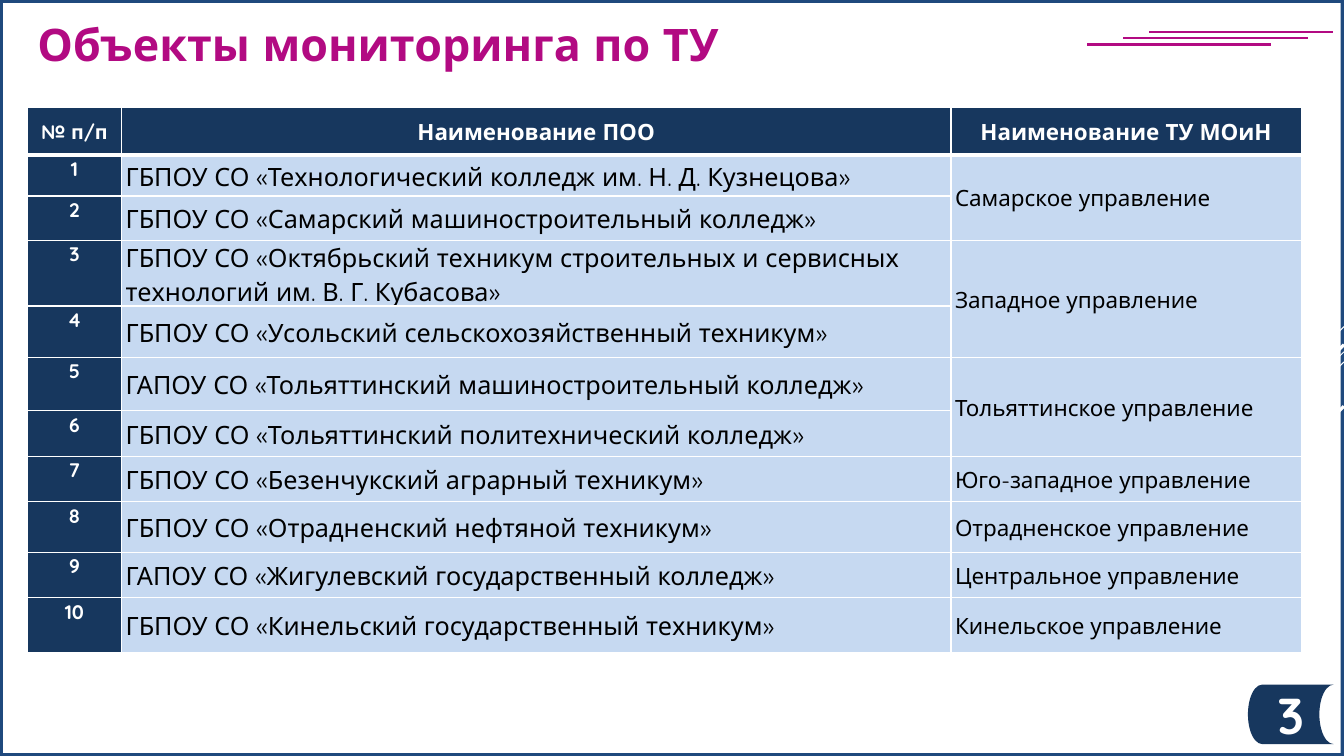
import pptx
import pptx.util
import pptx.dml.color
import pptx.enum.shapes
import pptx.enum.text
import pptx.oxml
import pptx.oxml.ns
import lxml.etree

Pt = pptx.util.Pt
PP_ALIGN = pptx.enum.text.PP_ALIGN
ANCHOR = pptx.enum.text.MSO_ANCHOR
SHAPE = pptx.enum.shapes.MSO_SHAPE
NAVY, MAGENTA, WHITE, PALE = "17375E", "B20A82", "FFFFFF", "C6D9F1"


def colour(hex_value):
    return pptx.dml.color.RGBColor.from_string(hex_value)


def write(frame, text, size, hex_value, bold, align):
    paragraph = frame.paragraphs[0]
    paragraph.alignment = align
    run = paragraph.add_run()
    run.text = text
    run.font.name = "Quicksand"
    run.font.size = Pt(size)
    run.font.bold = bold
    run.font.color.rgb = colour(hex_value)
    return paragraph


deck = pptx.Presentation()
deck.slide_width, deck.slide_height = Pt(960), Pt(540)
slide = deck.slides.add_slide(deck.slide_layouts[5])
slide.background.fill.solid()
slide.background.fill.fore_color.rgb = colour("1F497D")

edge_rays = [
    (960, 233.3, 888, 305.3, WHITE, 0.75),
    (960, 251.3, 725, 486, WHITE, 0.75),
    (960, 258.5, 810.7, 408, WHITE, 0.75),
    (960, 246.2, 822.2, 383.8, WHITE, 2.25),
    (960, 290.2, 859.7, 390.2, WHITE, 2.25),
]
corner_strokes = [
    (left, top, left + 131.5, top, MAGENTA, 1.5)
    for left, top in [(821, 22.8), (802.5, 27.3), (776.5, 31.8)]
]
strokes = []
for x1, y1, x2, y2, hex_value, width in edge_rays + corner_strokes:
    stroke = slide.shapes.add_connector(
        pptx.enum.shapes.MSO_CONNECTOR.STRAIGHT, Pt(x1), Pt(y1), Pt(x2), Pt(y2))
    stroke.line.color.rgb = colour(hex_value)
    stroke.line.width = Pt(width)
    lxml.etree.SubElement(stroke.element.spPr, pptx.oxml.ns.qn("a:effectLst"))
    strokes.append(stroke)

panel = slide.shapes.add_shape(SHAPE.RECTANGLE, Pt(2.2), Pt(2.2), Pt(955.4), Pt(535.6))
page_badge = slide.shapes.add_shape(
    SHAPE.FLOWCHART_STORED_DATA, Pt(891.4), Pt(489), Pt(61.2), Pt(42.5))
for backdrop, hex_value in [(panel, WHITE), (page_badge, NAVY)]:
    backdrop.shadow.inherit = False
    backdrop.fill.solid()
    backdrop.fill.fore_color.rgb = colour(hex_value)
    backdrop.line.fill.background()
strokes[len(edge_rays) - 1].element.addnext(panel.element)
page_badge.text_frame.vertical_anchor = ANCHOR.MIDDLE
write(page_badge.text_frame, "3", 36, WHITE, True, PP_ALIGN.CENTER)

title = slide.shapes.title
title.left, title.top, title.width, title.height = Pt(19.5), Pt(8.6), Pt(642), Pt(46)
title.text_frame.word_wrap = True
title.text_frame.auto_size = pptx.enum.text.MSO_AUTO_SIZE.SHAPE_TO_FIT_TEXT
title.text_frame.vertical_anchor = ANCHOR.TOP
write(title.text_frame, "Объекты мониторинга по ТУ", 32, MAGENTA, True, PP_ALIGN.LEFT)
panel.element.addnext(title.element)

headings = ("№ п/п", "Наименование ПОО", "Наименование ТУ МОиН")
colleges_by_office = [
    ("Самарское управление", [
        "ГБПОУ СО «Технологический колледж им. Н. Д. Кузнецова»",
        "ГБПОУ СО «Самарский машиностроительный колледж»"]),
    ("Западное управление", [
        "ГБПОУ СО «Октябрьский техникум строительных и сервисных технологий им. В. Г. Кубасова»",
        "ГБПОУ СО «Усольский сельскохозяйственный техникум»"]),
    ("Тольяттинское управление", [
        "ГАПОУ СО «Тольяттинский машиностроительный колледж»",
        "ГБПОУ СО «Тольяттинский политехнический колледж»"]),
    ("Юго-западное управление", ["ГБПОУ СО «Безенчукский аграрный техникум»"]),
    ("Отрадненское управление", ["ГБПОУ СО «Отрадненский нефтяной техникум»"]),
    ("Центральное управление", ["ГАПОУ СО «Жигулевский государственный колледж»"]),
    ("Кинельское управление", ["ГБПОУ СО «Кинельский государственный техникум»"]),
]
column_widths = [67.2, 592.5, 250.3]
row_heights = [33.8, 29.3, 31.5, 47, 36.6, 38.3, 32.6, 32.4, 36.2, 32.4, 39.1]

registry = slide.shapes.add_table(
    len(row_heights), len(column_widths), Pt(19.6), Pt(77),
    Pt(sum(column_widths)), Pt(sum(row_heights))).table
registry.horz_banding = False
for column, width in zip(registry.columns, column_widths):
    column.width = Pt(width)
for row, height in zip(registry.rows, row_heights):
    row.height = Pt(height)

contents = [headings]
for office, colleges in colleges_by_office:
    first = len(contents)
    for college in colleges:
        contents.append((str(len(contents)), college, office if len(contents) == first else ""))
    if len(colleges) > 1:
        registry.cell(first, 2).merge(registry.cell(len(contents) - 1, 2))

for row, texts in enumerate(contents):
    for column, text in enumerate(texts):
        cell = registry.cell(row, column)
        dark = row == 0 or column == 0
        cell.margin_left = cell.margin_right = Pt(2.9)
        cell.margin_top = cell.margin_bottom = Pt(0)
        cell.vertical_anchor = ANCHOR.TOP if row and column == 0 else ANCHOR.MIDDLE
        cell.fill.solid()
        cell.fill.fore_color.rgb = colour(NAVY if dark else PALE)
        if text:
            size = 18 if row and column == 1 else (14, 16, 16)[column]
            paragraph = write(cell.text_frame, text, size, WHITE if dark else "000000",
                              dark, PP_ALIGN.CENTER if dark else PP_ALIGN.LEFT)
            paragraph.line_spacing = 1.07
        properties = cell._tc.get_or_add_tcPr()
        for order, side in enumerate("LRTB"):
            heavy = (row, side) in [(0, "B"), (1, "T")]
            properties.insert(order, pptx.oxml.parse_xml(
                f'<a:ln{side} {pptx.oxml.ns.nsdecls("a")} w="{Pt(3 if heavy else 1)}">'
                f'<a:solidFill><a:srgbClr val="{WHITE}"/></a:solidFill></a:ln{side}>'))

deck.save("out.pptx")
